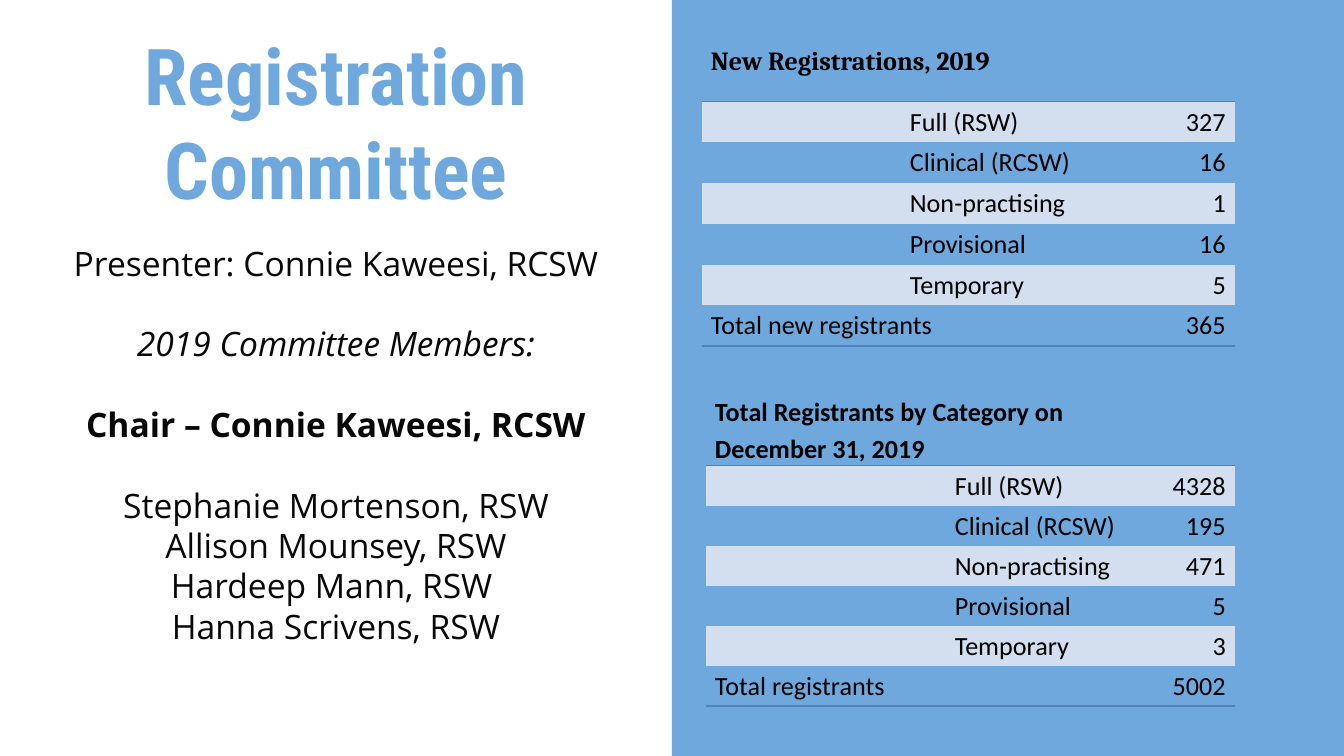
from lxml.etree import SubElement
from pptx import Presentation
from pptx.dml.color import RGBColor
from pptx.enum.shapes import MSO_SHAPE as Shape
from pptx.enum.text import MSO_ANCHOR as Anchor, MSO_AUTO_SIZE as AutoSize, PP_ALIGN as Align
from pptx.oxml.ns import qn
from pptx.util import Inches, Pt

WIDTH = Inches(10)
HEIGHT = WIDTH * 9 // 16
COLORS = {"blue": "6FA8DC", "band": "D3DFEE", "rule": "4F81BD", "text": "080808", "black": "000000"}
NO_STYLE = "{2D5ABB26-0587-4C30-8999-92F81FD0307C}"
LINE = 21.6
MEMBERS = [
    ("Presenter: Connie Kaweesi, RCSW", False, False, 0),
    ("2019 Committee Members:", False, True, LINE),
    ("Chair – Connie Kaweesi, RCSW", True, False, LINE),
    ("Stephanie Mortenson, RSW", False, False, LINE),
    ("Allison Mounsey, RSW", False, False, 0),
    ("Hardeep Mann, RSW ", False, False, 0),
    ("Hanna Scrivens, RSW", False, False, 0),
]
CATEGORIES = ["Full (RSW)", "Clinical (RCSW)", "Non-practising", "Provisional", "Temporary"]


def scale(left, top, width, height):
    """Turn shares of the slide into a box of lengths."""
    return int(left * WIDTH), int(top * HEIGHT), int(width * WIDTH), int(height * HEIGHT)


def set_font(paragraph, name, size, color, bold=False, italic=False):
    """Format all the text of a paragraph."""
    font = paragraph.font
    font.name, font.size, font.bold, font.italic = name, Pt(size), bold, italic
    font.color.rgb = RGBColor.from_string(COLORS[color])


def prepare_frame(shape, anchor):
    """Give a text shape even insets and wrapping."""
    frame = shape.text_frame
    frame.word_wrap, frame.auto_size, frame.vertical_anchor = True, AutoSize.NONE, anchor
    frame.margin_left = frame.margin_right = frame.margin_top = frame.margin_bottom = Inches(0.1)
    return frame


def add_panel(slide, box):
    """Fill a box with the blue background."""
    panel = slide.shapes.add_shape(Shape.RECTANGLE, *box)
    panel.shadow.inherit = False
    panel.fill.solid()
    panel.fill.fore_color.rgb = RGBColor.from_string(COLORS["blue"])
    panel.line.fill.background()


def add_committee(slide, box):
    """Put the title in the top 27% of a box and the members below it."""
    left, top, width, height = box
    title_height = int(height * 0.27)
    title = slide.shapes.title
    title.left, title.top, title.width, title.height = left, top, width, title_height
    frame = prepare_frame(title, Anchor.BOTTOM)
    frame.text = "Registration Committee"
    frame.paragraphs[0].alignment = Align.CENTER
    set_font(frame.paragraphs[0], "Roboto Condensed", 42, "blue", bold=True)

    members = slide.shapes.add_textbox(left, top + title_height, width, height - title_height)
    frame = prepare_frame(members, Anchor.TOP)
    frame.text = "\n".join(member[0] for member in MEMBERS)
    for paragraph, (_, bold, italic, gap) in zip(frame.paragraphs, MEMBERS):
        paragraph.alignment = Align.CENTER
        paragraph.line_spacing, paragraph.space_before = 1.0, Pt(gap)
        set_font(paragraph, "Open Sans", 18, "text", bold, italic)


def add_bottom_rule(cell):
    """Draw a line under a table cell."""
    properties = cell._tc.get_or_add_tcPr()
    line = SubElement(properties, qn("a:lnB"), w=str(Pt(1)))
    fill = SubElement(line, qn("a:solidFill"))
    SubElement(fill, qn("a:srgbClr"), val=COLORS["rule"])


def fill_cell(cell, text, font_name, bold, align, indent):
    """Write and format the text of one table cell."""
    cell.margin_left = cell.margin_right = Inches(0.07)
    cell.margin_top = cell.margin_bottom = 0
    cell.text = text
    for paragraph in cell.text_frame.paragraphs:
        paragraph.alignment, paragraph.line_spacing = align, 1.15
        set_font(paragraph, font_name, 14, "black", bold)
        if indent:
            paragraph._p.get_or_add_pPr().set("marL", str(Inches(indent)))


def add_registrations(slide, box, columns, header_share, rows, header_font, indent=0):
    """Build a banded table with a heading, categories and a total."""
    width, height = box[2:]
    table = slide.shapes.add_table(len(rows), len(columns), *box).table
    table.first_row = table.horz_banding = False
    table._tbl.tblPr.find(qn("a:tableStyleId")).text = NO_STYLE
    for column, share in zip(table.columns, columns):
        column.width = int(width * share)
    last = len(rows) - 1
    for number, (row, texts) in enumerate(zip(table.rows, rows)):
        share = (1 - header_share) / last if number else header_share
        row.height = int(height * share)
        is_category = 0 < number < last
        for index, (cell, text) in enumerate(zip(row.cells, texts)):
            is_value = number > 0 and index == len(columns) - 1
            fill_cell(cell, text, "Calibri" if number else header_font, number == 0,
                      Align.RIGHT if is_value else Align.LEFT,
                      indent if is_category and index == 0 else 0)
            if not is_category:
                add_bottom_rule(cell)
            if is_category and number % 2:
                cell.fill.solid()
                cell.fill.fore_color.rgb = RGBColor.from_string(COLORS["band"])
            else:
                cell.fill.background()
    return table


def main():
    """Build and save the slide."""
    presentation = Presentation()
    presentation.slide_width, presentation.slide_height = WIDTH, HEIGHT
    slide = presentation.slides.add_slide(presentation.slide_layouts[5])
    add_panel(slide, scale(0.5, 0, 0.5, 1))
    add_committee(slide, scale(0.029, 0.059, 0.442, 0.904))

    total_values = ["4328", "195", "471", "5", "3"]
    total_rows = [("Total Registrants by Category on\nDecember 31, 2019", "", ""),
                  *(("", *pair) for pair in zip(CATEGORIES, total_values)),
                  ("Total registrants", "", "5002")]
    totals = add_registrations(slide, scale(0.525, 0.519, 0.394, 0.414), (0.453, 0.407, 0.14),
                               0.232, total_rows, "Calibri")
    totals.cell(0, 0).merge(totals.cell(0, 2))

    new_rows = [("New Registrations, 2019", ""),
                *zip(CATEGORIES, ["327", "16", "1", "16", "5"]),
                ("Total new registrants", "365")]
    add_registrations(slide, scale(0.522, 0.056, 0.397, 0.402), (0.829, 0.171),
                      0.195, new_rows, "Cambria", indent=1.48)
    presentation.save("out.pptx")


if __name__ == "__main__":
    main()
